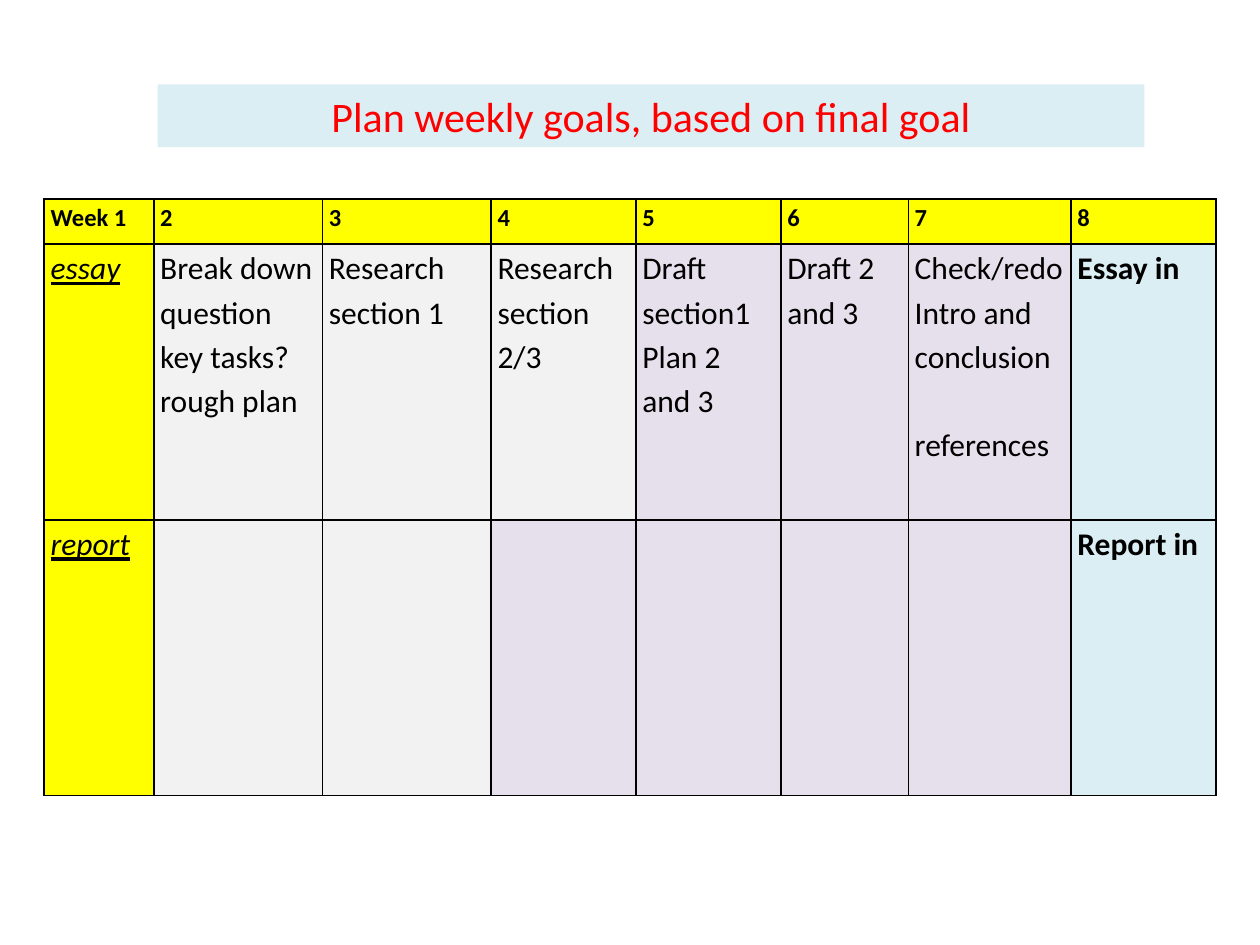
from lxml import etree
from pptx import Presentation, util as u
from pptx.dml import color
from pptx.enum import shapes, text
from pptx.oxml import ns

COLORS = {
    "black": "000000",
    "red": "FF0000",
    "yellow": "FFFF00",
    "grey": "F2F2F2",
    "lilac": "E6E0EC",
    "blue": "DBEEF4",
}
FONT = "Calibri"
COLUMN_WIDTHS = [2.21, 3.4, 3.4, 2.92, 2.92, 2.57, 3.28, 2.92]
ROW_HEIGHTS = [0.91, 5.56, 5.56]
LINE_PITCH = 25.2

WEEKS = ["Week 1", "2", "3", "4", "5", "6", "7", "8"]
ESSAY = [
    ["Break down question", "key tasks?", "rough plan"],
    ["Research", "section 1"],
    ["Research", "section 2/3"],
    ["Draft section1", "Plan 2 and 3"],
    ["Draft 2 and 3"],
    ["Check/redo Intro and conclusion", "references"],
]
TASKS = [
    ("essay", ESSAY, "Essay in", ["grey"] * 3 + ["lilac"] * 3),
    ("report", [[]] * 6, "Report in", ["grey"] * 2 + ["lilac"] * 4),
]


def rgb(name):
    return color.RGBColor.from_string(COLORS[name])


def paint(target, name):
    target.fill.solid()
    target.fill.fore_color.rgb = rgb(name)


def add_run(paragraph, words, size, color_name="black", bold=False, label=False):
    run = paragraph.add_run()
    run.text = words
    font = run.font
    font.name = FONT
    font.size = u.Pt(size)
    font.bold = bold
    font.italic = label
    font.underline = label
    font.color.rgb = rgb(color_name)


def add_borders(cell):
    properties = cell._tc.get_or_add_tcPr()
    for side in ("a:lnL", "a:lnR", "a:lnT", "a:lnB"):
        line = etree.SubElement(properties, ns.qn(side), w=str(u.Pt(1)))
        fill = etree.SubElement(line, ns.qn("a:solidFill"))
        etree.SubElement(fill, ns.qn("a:srgbClr"), val=COLORS["black"])


def fill_cell(cell, lines, fill, size=18, bold=False, label=False):
    add_borders(cell)
    paint(cell, fill)
    cell.margin_left = cell.margin_right = u.Cm(0.13)
    cell.margin_top = cell.margin_bottom = 0
    frame = cell.text_frame
    for index, words in enumerate(lines):
        paragraph = frame.add_paragraph() if index else frame.paragraphs[0]
        paragraph.line_spacing = 1.15
        if words == "references":
            paragraph.space_before = u.Pt(LINE_PITCH)
        add_run(paragraph, words, size, bold=bold, label=label)


def add_plan(slide):
    frame = slide.shapes.add_table(
        len(ROW_HEIGHTS), len(COLUMN_WIDTHS), u.Cm(0.89), u.Cm(4.01),
        u.Cm(sum(COLUMN_WIDTHS)), u.Cm(sum(ROW_HEIGHTS)))
    table = frame.table
    for column, width in zip(table.columns, COLUMN_WIDTHS):
        column.width = u.Cm(width)
    for row, height in zip(table.rows, ROW_HEIGHTS):
        row.height = u.Cm(height)
    for index, week in enumerate(WEEKS):
        fill_cell(table.cell(0, index), [week], "yellow", size=14, bold=True)
    for row, (name, goals, deadline, fills) in enumerate(TASKS, 1):
        fill_cell(table.cell(row, 0), [name], "yellow", label=True)
        for column, (lines, fill) in enumerate(zip(goals, fills), 1):
            fill_cell(table.cell(row, column), lines, fill)
        fill_cell(table.cell(row, len(WEEKS) - 1), [deadline], "blue", bold=True)


def add_title(slide, words):
    shape = slide.shapes.add_shape(
        shapes.MSO_SHAPE.RECTANGLE, u.Cm(3.18), u.Cm(1.7), u.Cm(19.89), u.Cm(1.27))
    shape.shadow.inherit = False
    shape.line.fill.background()
    paint(shape, "blue")
    frame = shape.text_frame
    frame.word_wrap = True
    frame.auto_size = text.MSO_AUTO_SIZE.SHAPE_TO_FIT_TEXT
    frame.vertical_anchor = text.MSO_ANCHOR.TOP
    paragraph = frame.paragraphs[0]
    paragraph.alignment = text.PP_ALIGN.CENTER
    add_run(paragraph, words, 24, "red")


def main():
    presentation = Presentation()
    presentation.slide_width = u.Cm(25.4)
    presentation.slide_height = u.Cm(19.05)
    slide = presentation.slides.add_slide(presentation.slide_layouts[6])
    add_plan(slide)
    add_title(slide, "Plan weekly goals, based on final goal")
    presentation.save("out.pptx")


if __name__ == "__main__":
    main()
